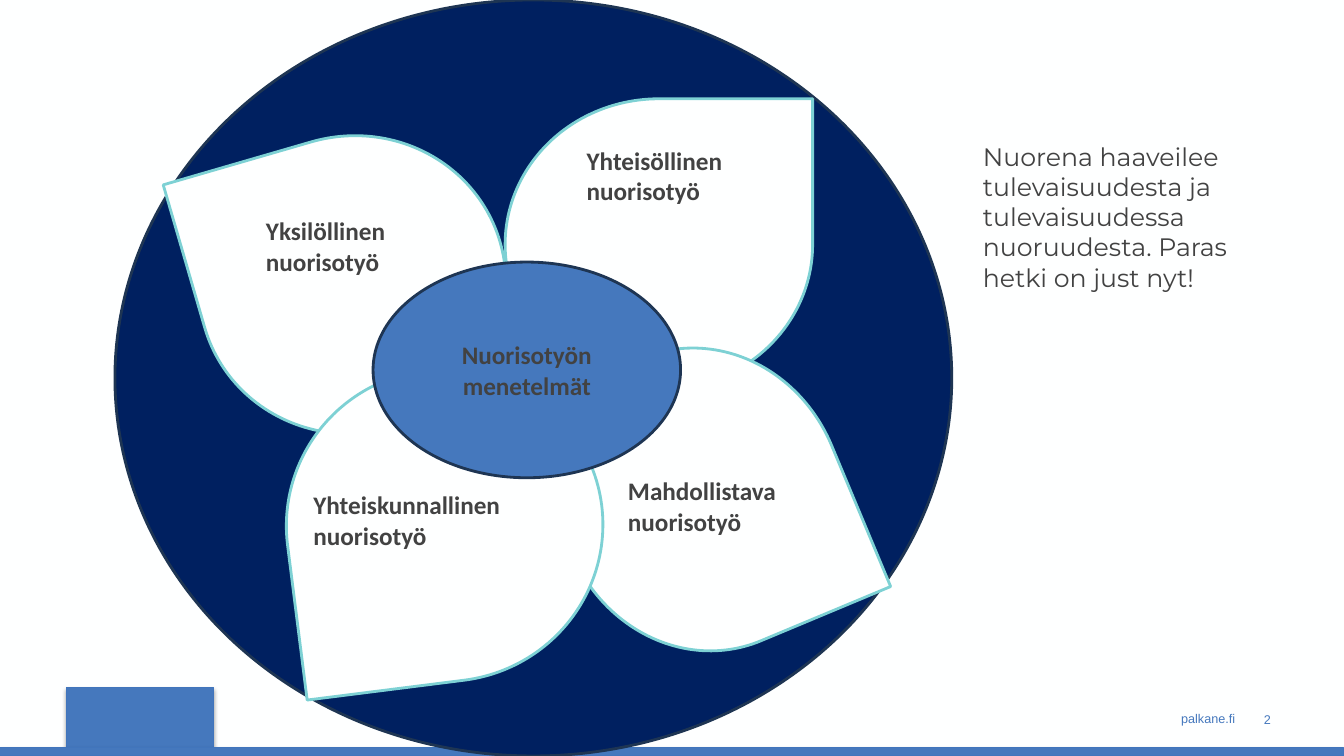
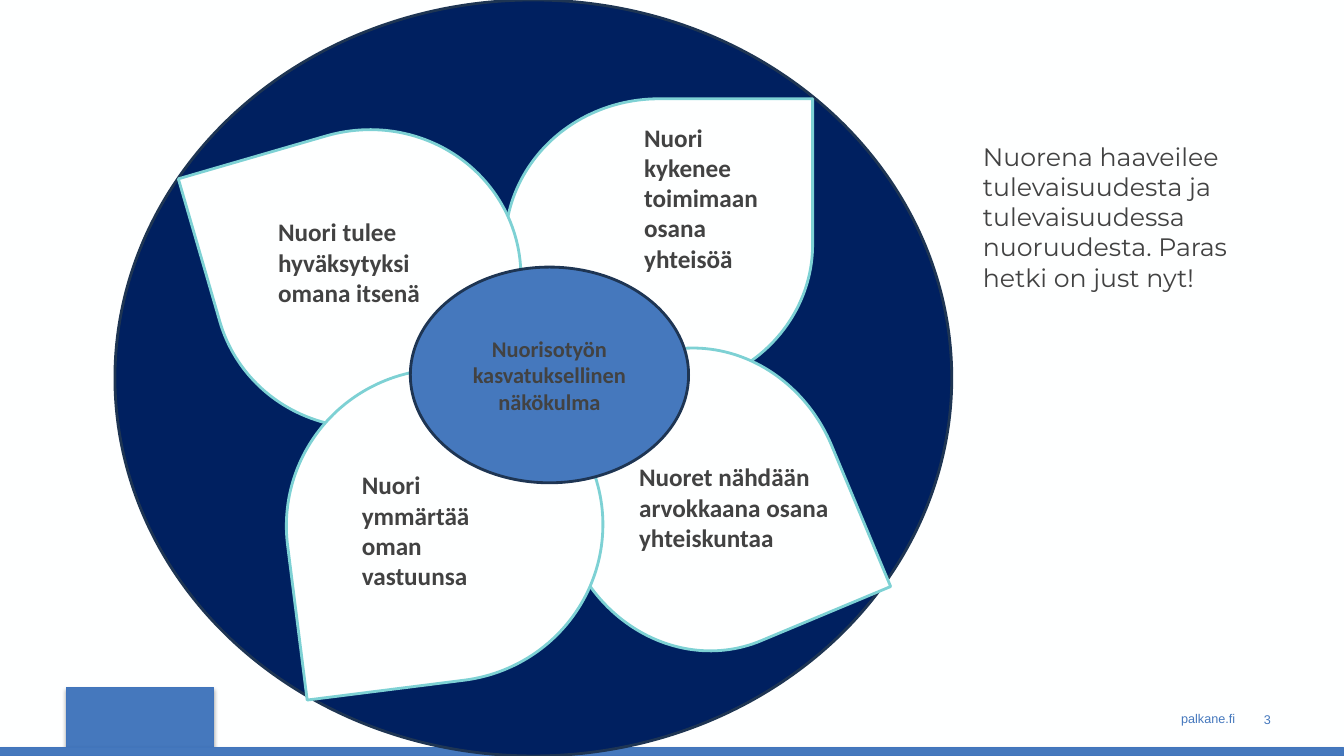
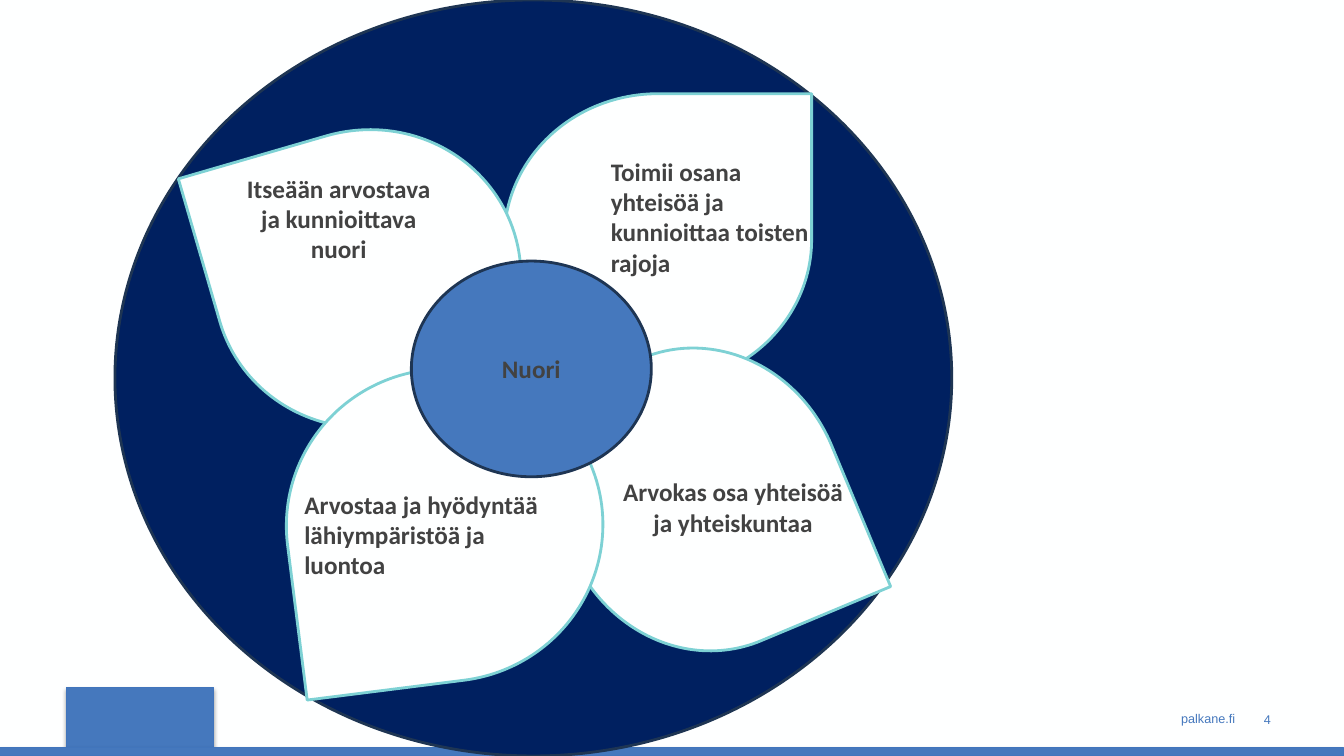
from dataclasses import dataclass
from typing import NamedTuple

from lxml.etree import SubElement
from pptx import Presentation
from pptx.dml.color import RGBColor
from pptx.enum.shapes import MSO_SHAPE
from pptx.enum.text import MSO_ANCHOR, MSO_AUTO_SIZE, PP_ALIGN
from pptx.oxml.ns import qn
from pptx.util import Inches, Pt


@dataclass(frozen=True)
class Theme:
    background: str = "FEFFFF"
    blue: str = "4578BD"
    blue_edge: str = "4175BC"
    navy: str = "002060"
    navy_edge: str = "1E3553"
    turquoise: str = "7DD1D4"
    ink: str = "424242"
    heading_font: str = "Calibri"
    quote_font: str = "Montserrat"
    footer_font: str = "Arial"
    body_size: int = 18
    compact_size: int = 16
    footer_size: int = 9
    outline: float = 2
    thin_outline: float = 0.75


class Box(NamedTuple):
    left: float
    top: float
    width: float
    height: float

    def inside(self, outer):
        return Box(outer.left + self.left, outer.top + self.top, self.width, self.height)

    def lengths(self):
        return [Inches(value) for value in self]


class Label(NamedTuple):
    text: str
    box: Box
    align: PP_ALIGN = PP_ALIGN.LEFT


class Petal(NamedTuple):
    box: Box
    rotation: float


class Flower(NamedTuple):
    petals: list
    centre: Box
    centre_text: str
    labels: list
    centre_size: int = Theme.body_size
    quote: str = ""


THEME = Theme()
PAGE = Box(0, 0, 13.33, 7.5)
FLOWER = Box(1.14, 0, 8.3, 7.5)
FOOTER = Box(0, 6.82, 13.33, 0.68)
QUOTE = Box(9.65, 1.35, 2.94, 1.62)

UPPER_RIGHT = Petal(Box(3.87, 0.98, 3.05, 2.89), 0)
LOWER_RIGHT = Petal(Box(4.3, 3.56, 3.04, 2.79), 67.3)
UPPER_LEFT = Petal(Box(1.03, 1.24, 2.95, 3.05), 253.8)
LOWER_LEFT = Petal(Box(1.7, 3.66, 3.14, 3.1), 172.8)

QUOTE_TEXT = (
    "Nuorena haaveilee tulevaisuudesta ja tulevaisuudessa nuoruudesta. "
    "Paras hetki on just nyt!"
)

FLOWERS = [
    Flower(
        petals=[
            UPPER_RIGHT,
            LOWER_RIGHT,
            UPPER_LEFT._replace(box=Box(0.88, 1.3, 2.95, 3.05)),
            LOWER_LEFT,
        ],
        centre=Box(2.56, 2.6, 3.05, 2.14),
        centre_text="Nuorisotyön menetelmät",
        labels=[
            Label("Yksilöllinen nuorisotyö", Box(1.4, 2.09, 1.83, 0.71)),
            Label("Yhteisöllinen nuorisotyö", Box(4.58, 1.39, 2.09, 0.71)),
            Label("Yhteiskunnallinen nuorisotyö", Box(1.87, 4.81, 2.8, 0.71)),
            Label("Mahdollistava nuorisotyö", Box(4.99, 4.67, 2.11, 0.71)),
        ],
        quote=QUOTE_TEXT,
    ),
    Flower(
        petals=[UPPER_RIGHT, LOWER_RIGHT, UPPER_LEFT, LOWER_LEFT],
        centre=Box(2.93, 2.65, 2.76, 2.14),
        centre_text="Nuorisotyön kasvatuksellinen näkökulma",
        centre_size=THEME.compact_size,
        labels=[
            Label("Nuori tulee hyväksytyksi omana itsenä", Box(1.52, 2.1, 1.65, 1.31)),
            Label("Nuori kykenee toimimaan osana yhteisöä", Box(5.15, 1.16, 1.61, 1.62)),
            Label("Nuoret nähdään arvokkaana osana yhteiskuntaa", Box(5.1, 4.53, 2.62, 1.01)),
            Label("Nuori ymmärtää oman vastuunsa", Box(2.35, 4.61, 1.57, 1.31)),
        ],
        quote=QUOTE_TEXT,
    ),
    Flower(
        petals=[
            UPPER_RIGHT._replace(box=Box(3.86, 0.93, 3.05, 2.89)),
            LOWER_RIGHT,
            UPPER_LEFT,
            LOWER_LEFT,
        ],
        centre=Box(2.94, 2.59, 2.38, 2.14),
        centre_text="Nuori",
        labels=[
            Label(
                "Itseään arvostava ja kunnioittava\nnuori",
                Box(1.19, 1.67, 2.06, 1.62),
                PP_ALIGN.CENTER,
            ),
            Label(
                "Toimii osana yhteisöä ja kunnioittaa toisten rajoja",
                Box(4.82, 1.5, 2.3, 1.31),
            ),
            Label(
                "Arvokas osa yhteisöä ja yhteiskuntaa",
                Box(4.82, 4.68, 2.62, 1.31),
                PP_ALIGN.CENTER,
            ),
            Label(
                "Arvostaa ja hyödyntää lähiympäristöä ja luontoa",
                Box(1.78, 4.8, 2.62, 1.31),
            ),
        ],
    ),
]


def write_text(shape, text, *, font=THEME.heading_font, size=THEME.body_size,
               color=THEME.ink, bold=False, align=PP_ALIGN.LEFT,
               anchor=MSO_ANCHOR.TOP, margin=None):
    frame = shape.text_frame
    frame.word_wrap = True
    frame.vertical_anchor = anchor
    if margin is not None:
        frame.margin_left = frame.margin_right = Inches(margin)
        frame.margin_top = frame.margin_bottom = Inches(margin)
    frame.text = text
    for paragraph in frame.paragraphs:
        paragraph.alignment = align
        for run in paragraph.runs:
            run.font.name = font
            run.font.size = Pt(size)
            run.font.bold = bold
            run.font.color.rgb = RGBColor.from_string(color)


def add_text(slide, box, text, **style):
    shape = slide.shapes.add_textbox(*box.lengths())
    write_text(shape, text, **style)
    shape.text_frame.auto_size = MSO_AUTO_SIZE.SHAPE_TO_FIT_TEXT
    return shape


def add_figure(slide, kind, box, *, fill, line, width=THEME.outline, rotation=0):
    shape = slide.shapes.add_shape(kind, *box.lengths())
    shape.shadow.inherit = False
    shape.rotation = rotation
    shape.fill.solid()
    shape.fill.fore_color.rgb = RGBColor.from_string(fill)
    shape.line.color.rgb = RGBColor.from_string(line)
    shape.line.width = Pt(width)
    return shape


def add_soft_shadow(shape):
    effects = shape._element.spPr.find(qn("a:effectLst"))
    shadow = SubElement(
        effects, qn("a:outerShdw"), blurRad=str(Pt(3.1)), dist=str(Pt(1.8)),
        dir="5400000", rotWithShape="0",
    )
    color = SubElement(shadow, qn("a:srgbClr"), val="000000")
    SubElement(color, qn("a:alpha"), val="35000")


def add_footer(slide, box, number):
    footer_style = dict(
        font=THEME.footer_font, size=THEME.footer_size, color=THEME.blue, margin=0
    )
    add_text(slide, Box(12.33, 0.24, 0.48, 0.15).inside(box), str(number),
             align=PP_ALIGN.CENTER, **footer_style)
    add_text(slide, Box(10.07, 0.23, 2.18, 0.15).inside(box), "palkane.fi",
             align=PP_ALIGN.RIGHT, **footer_style)
    for band in (Box(0.66, 0, 1.46, 0.65), Box(0, 0.6, box.width, 0.08)):
        shape = add_figure(slide, MSO_SHAPE.RECTANGLE, band.inside(box),
                           fill=THEME.blue, line=THEME.blue_edge,
                           width=THEME.thin_outline)
        add_soft_shadow(shape)


def add_flower(slide, box, flower):
    add_figure(slide, MSO_SHAPE.OVAL, box, fill=THEME.navy, line=THEME.navy_edge)
    for petal in flower.petals:
        add_figure(slide, MSO_SHAPE.TEAR, petal.box.inside(box),
                   fill=THEME.background, line=THEME.turquoise,
                   rotation=petal.rotation)
    centre = add_figure(slide, MSO_SHAPE.OVAL, flower.centre.inside(box),
                        fill=THEME.blue, line=THEME.navy_edge)
    write_text(centre, flower.centre_text, size=flower.centre_size, bold=True,
               align=PP_ALIGN.CENTER, anchor=MSO_ANCHOR.MIDDLE)
    for label in flower.labels:
        add_text(slide, label.box.inside(box), label.text, bold=True, align=label.align)


def add_flower_slide(presentation, flower, number):
    slide = presentation.slides.add_slide(presentation.slide_layouts[6])
    add_footer(slide, FOOTER, number)
    if flower.quote:
        add_text(slide, QUOTE, flower.quote, font=THEME.quote_font)
    add_flower(slide, FLOWER, flower)


def main():
    presentation = Presentation()
    presentation.slide_width = Inches(PAGE.width)
    presentation.slide_height = Inches(PAGE.height)
    background = presentation.slide_master.background.fill
    background.solid()
    background.fore_color.rgb = RGBColor.from_string(THEME.background)
    for number, flower in enumerate(FLOWERS, start=2):
        add_flower_slide(presentation, flower, number)
    presentation.save("out.pptx")


if __name__ == "__main__":
    main()
